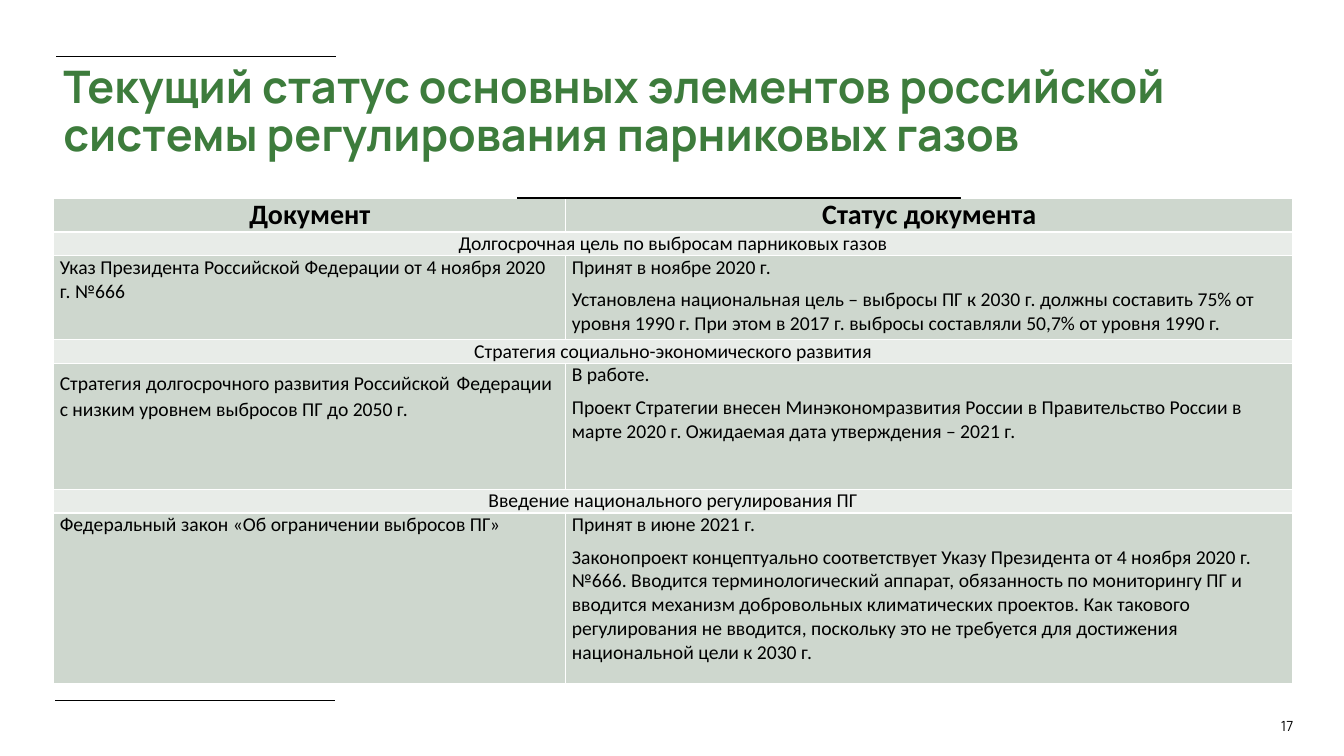
from dataclasses import dataclass

import lxml.etree
import pptx
import pptx.dml.color
import pptx.enum.shapes
import pptx.enum.text
import pptx.oxml.ns
import pptx.util

Pt = pptx.util.Pt
ALIGN = pptx.enum.text.PP_ALIGN
ANCHOR = pptx.enum.text.MSO_ANCHOR
qn = pptx.oxml.ns.qn

COLORS = {"title": "3D7C3C", "ink": "000000", "body": "CED7CE", "section": "E8ECE8", "border": "FFFFFF"}


@dataclass
class Rule:
    left: float
    top: float
    length: float


@dataclass
class Label:
    text: str
    left: float
    top: float
    width: float
    height: float
    size: float
    color: str
    bold: bool = False
    align: ALIGN = ALIGN.LEFT
    line_spacing: float = 1.0


@dataclass
class Row:
    height: float
    document: list[str]
    status: list[str] | None = None  # None: a section heading across the table
    header: bool = False


RULES = [Rule(40.3, 40.3, 199.4), Rule(39.6, 500.4, 199.4)]

LABELS = [
    Label("Текущий статус основных элементов российской системы регулирования парниковых газов",
          38.2, 41, 856, 79.2, 32, "title", bold=True, line_spacing=0.9),
    Label("17", 894.2, 504, 36.7, 28.8, 10, "ink", align=ALIGN.RIGHT),
]

COLUMN_WIDTHS = [365.8, 519.1]
WIDE_SPACE = "Российской Федерации с низким"
ROWS = [
    Row(24.4, ["Документ"], ["Статус документа"], header=True),
    Row(17, ["Долгосрочная цель по выбросам парниковых газов"]),
    Row(59.8, ["Указ Президента Российской Федерации от 4 ноября 2020 г. №666"],
        ["Принят в ноябре 2020 г.",
         "Установлена национальная цель – выбросы ПГ к 2030 г. должны составить 75% от уровня 1990 г. "
         "При этом в 2017 г. выбросы составляли 50,7% от уровня 1990 г."]),
    Row(17, ["Стратегия социально-экономического развития"]),
    Row(90, ["Стратегия долгосрочного развития Российской Федерации с низким уровнем выбросов ПГ до 2050 г."],
        ["В работе.",
         "Проект Стратегии внесен Минэкономразвития России в Правительство России в марте 2020 г. "
         "Ожидаемая дата утверждения – 2021 г."]),
    Row(17, ["Введение национального регулирования ПГ"]),
    Row(122.1, ["Федеральный закон «Об ограничении выбросов ПГ»"],
        ["Принят в июне 2021 г.",
         "Законопроект концептуально соответствует Указу Президента от 4 ноября 2020 г. №666. "
         "Вводится терминологический аппарат, обязанность по мониторингу ПГ и вводится механизм "
         "добровольных климатических проектов. Как такового регулирования не вводится, поскольку "
         "это не требуется для достижения национальной цели к 2030 г."]),
]


def rgb(name: str) -> pptx.dml.color.RGBColor:
    return pptx.dml.color.RGBColor.from_string(COLORS[name])


def format_run(run, font: str, size: float, color: str, bold: bool) -> None:
    run.font.name = font
    run.font.size = Pt(size)
    run.font.bold = bold
    run.font.color.rgb = rgb(color)


def draw_rule(slide, rule: Rule) -> None:
    line = slide.shapes.add_connector(
        pptx.enum.shapes.MSO_CONNECTOR.STRAIGHT,
        Pt(rule.left), Pt(rule.top), Pt(rule.left + rule.length), Pt(rule.top))
    line.line.color.rgb = rgb("ink")
    line.line.width = Pt(1.25)
    lxml.etree.SubElement(line._element.spPr, qn("a:effectLst"))


def draw_label(slide, label: Label) -> None:
    box = slide.shapes.add_textbox(Pt(label.left), Pt(label.top), Pt(label.width), Pt(label.height))
    frame = box.text_frame
    frame.word_wrap = True
    frame.vertical_anchor = ANCHOR.MIDDLE
    frame.text = label.text
    paragraph = frame.paragraphs[0]
    paragraph.alignment = label.align
    paragraph.line_spacing = label.line_spacing
    format_run(paragraph.runs[0], "Manrope", label.size, label.color, label.bold)


def style_cell(cell, fill: str) -> None:
    cell.margin_left = cell.margin_right = Pt(4.3)
    cell.margin_top = cell.margin_bottom = 0
    cell.fill.solid()
    cell.fill.fore_color.rgb = rgb(fill)
    properties = cell._tc.get_or_add_tcPr()
    for index, side in enumerate(("lnL", "lnR", "lnT", "lnB")):
        border = lxml.etree.Element(qn(f"a:{side}"), w=str(Pt(1)))
        solid = lxml.etree.SubElement(border, qn("a:solidFill"))
        lxml.etree.SubElement(solid, qn("a:srgbClr"), val=COLORS["border"])
        properties.insert(index, border)


def fill_cell(cell, texts: list[str], size: float, bold: bool, centered: bool) -> None:
    frame = cell.text_frame
    frame.text = "\n".join(texts)
    for paragraph in frame.paragraphs:
        paragraph.alignment = ALIGN.CENTER if centered else ALIGN.LEFT
        paragraph.space_after = Pt(6)
        # One line holds a larger space between two words
        if WIDE_SPACE in paragraph.text:
            before, after = paragraph.text.split(" Федерации")
            paragraph.text = before
            paragraph.add_run().text = " "
            paragraph.add_run().text = "Федерации" + after
        for run in paragraph.runs:
            format_run(run, "Calibri", 20 if run.text == " " else size, "ink", bold)


def draw_table(slide, rows: list[Row]) -> None:
    table = slide.shapes.add_table(
        len(rows), len(COLUMN_WIDTHS), Pt(38.4), Pt(141.4),
        Pt(sum(COLUMN_WIDTHS)), Pt(sum(row.height for row in rows))).table
    table.first_row = table.horz_banding = False
    for column, width in zip(table.columns, COLUMN_WIDTHS):
        column.width = Pt(width)
    for index, row in enumerate(rows):
        table.rows[index].height = Pt(row.height)
        document, status = table.cell(index, 0), table.cell(index, 1)
        section = row.status is None
        for cell in (document, status):
            style_cell(cell, "section" if section else "body")
        size = 20 if row.header else 14
        fill_cell(document, row.document, size, row.header, row.header or section)
        if section:
            document.vertical_anchor = ANCHOR.MIDDLE
            document.merge(status)
        else:
            fill_cell(status, row.status, size, row.header, row.header)


def draw_header_bar(slide) -> None:
    bar = slide.shapes.add_shape(
        pptx.enum.shapes.MSO_SHAPE.RECTANGLE, Pt(369.4), Pt(141.1), Pt(316.8), Pt(0.7))
    bar.shadow.inherit = False
    bar.fill.solid()
    bar.fill.fore_color.rgb = rgb("ink")
    bar.line.color.rgb = rgb("ink")
    bar.line.width = Pt(0.75)


def main() -> None:
    deck = pptx.Presentation()
    deck.slide_width, deck.slide_height = Pt(960), Pt(540)
    slide = deck.slides.add_slide(deck.slide_layouts[6])

    # Rules at the top and bottom
    for rule in RULES:
        draw_rule(slide, rule)
    # Title and page number
    for label in LABELS:
        draw_label(slide, label)
    # Status table with the bar over its header
    draw_table(slide, ROWS)
    draw_header_bar(slide)

    deck.save("out.pptx")


if __name__ == "__main__":
    main()
